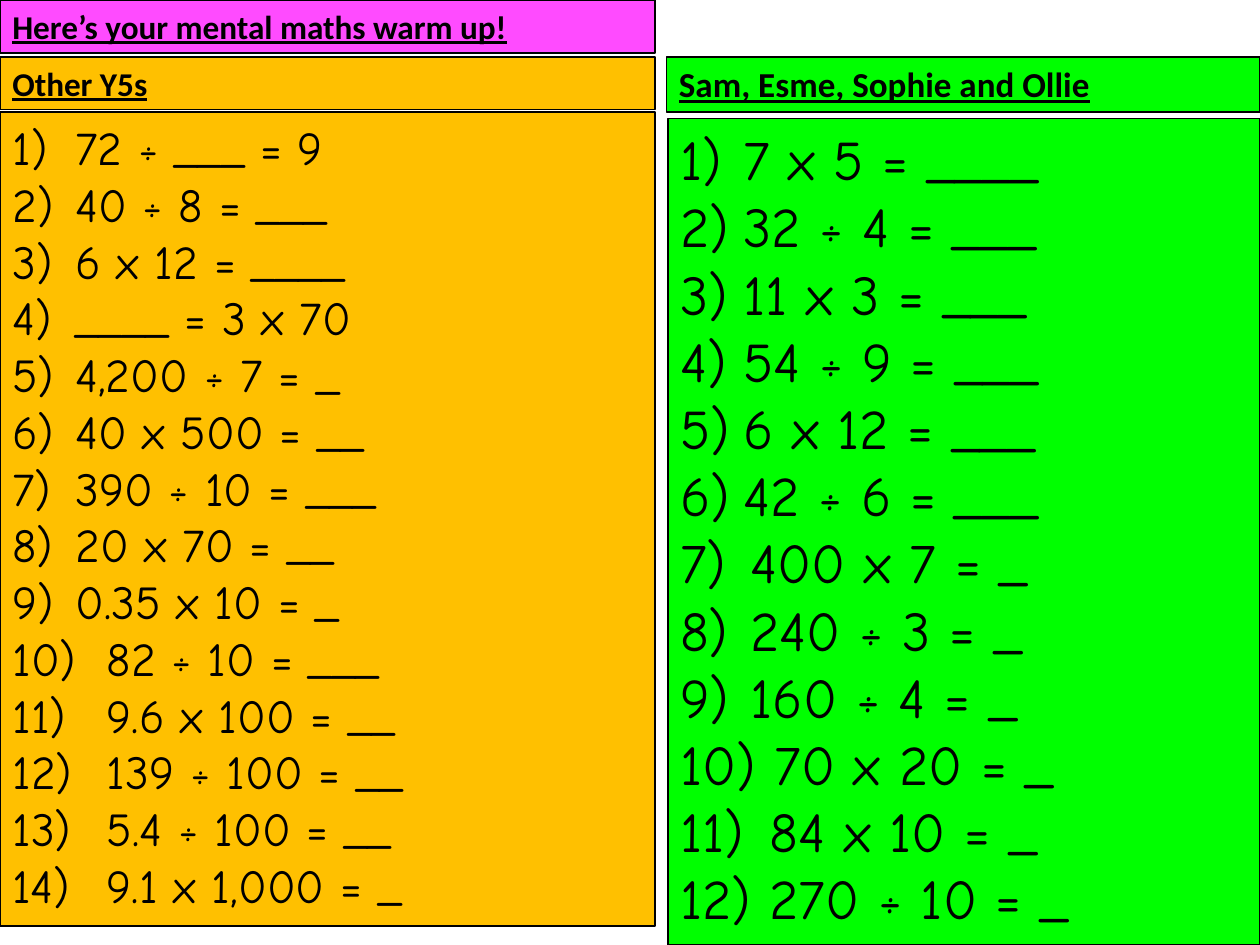
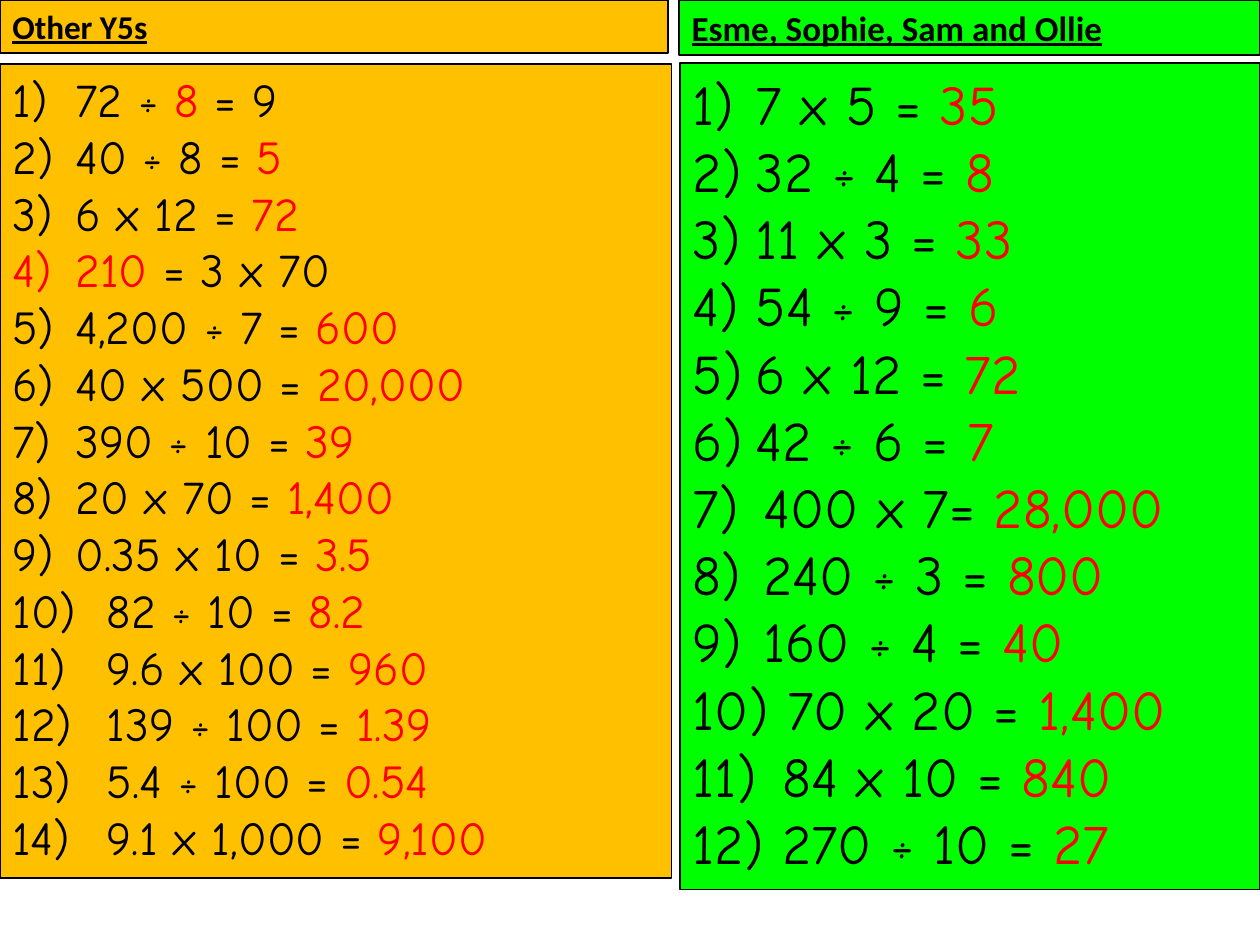
from dataclasses import dataclass

from lxml.etree import SubElement
from pptx import Presentation
from pptx.dml.color import RGBColor
from pptx.enum.shapes import MSO_SHAPE as Preset
from pptx.enum.text import MSO_ANCHOR as Anchor, MSO_AUTO_SIZE as AutoSize, PP_ALIGN as Align
from pptx.oxml.ns import qn
from pptx.util import Inches, Pt

BLACK = RGBColor(0x00, 0x00, 0x00)
RED = RGBColor(0xFF, 0x00, 0x00)
ORANGE = RGBColor(0xFF, 0xC0, 0x00)
GREEN = RGBColor(0x00, 0xFF, 0x00)
PINK = RGBColor(0xFF, 0x4B, 0xFF)

HEADING_FONT = "Calibri"
SUM_FONT = "Comic Neue"
GRID = Inches(0.1)
COLUMNS, ROWS = 100, 75


@dataclass
class Box:
    """A rectangle measured in grid columns and rows."""
    left: float
    top: float
    width: float
    height: float


@dataclass
class Group:
    """A set of sums, its look, and the text indent from each given number on."""
    color: RGBColor
    heading_size: int
    sum_size: int
    indents: dict
    sums: list


OTHERS = Group(ORANGE, 19, 27, {1: 0.5, 10: 0.75}, [
    ("72 ÷ {} = 9", "___", "8"),
    ("40 ÷ 8 = {}", "___", "5"),
    ("6 x 12 = {}", "____", "72"),
    ("{} = 3 x 70", "____", "210"),
    ("4,200 ÷ 7 = {}", "_", "600"),
    ("40 x 500 = {}", "__", "20,000"),
    ("390 ÷ 10 = {}", "___", "39"),
    ("20 x 70 = {}", "__", "1,400"),
    ("0.35 x 10 = {}", "_", "3.5"),
    ("82 ÷ 10 = {}", "___", "8.2"),
    ("9.6 x 100 = {}", "__", "960"),
    ("139 ÷ 100 = {}", "__", "1.39"),
    ("5.4 ÷ 100 = {}", "__", "0.54"),
    ("9.1 x 1,000 = {}", "_", "9,100"),
])
NAMED = Group(GREEN, 20, 32, {1: 0.5, 7: 0.56, 10: 0.75, 11: 0.71}, [
    ("7 x 5 = {}", "____", "35"),
    ("32 ÷ 4 = {}", "___", "8"),
    ("11 x 3 = {}", "___", "33"),
    ("54 ÷ 9 = {}", "___", "6"),
    ("6 x 12 = {}", "___", "72"),
    ("42 ÷ 6 = {}", "___", "7"),
    ("400 x 7 = {}", "_", "28,000"),
    ("240 ÷ 3 = {}", "_", "800"),
    ("160 ÷ 4 = {}", "_", "40"),
    ("70 x 20 = {}", "_", "1,400"),
    ("84 x 10 = {}", "_", "840"),
    ("270 ÷ 10 = {}", "_", "27"),
])
ANSWER_WORDING = {"400 x 7 = {}": "400 x 7= {}"}


def add_box(slide, box, color):
    """Draw an outlined rectangle and return its text frame."""
    edges = (round(length * GRID) for length in (box.left, box.top, box.width, box.height))
    shape = slide.shapes.add_shape(Preset.RECTANGLE, *edges)
    shape.shadow.inherit = False
    shape.fill.solid()
    shape.fill.fore_color.rgb = color
    shape.line.color.rgb = BLACK
    shape.line.width = Pt(1)
    frame = shape.text_frame
    frame.word_wrap = True
    frame.auto_size = AutoSize.SHAPE_TO_FIT_TEXT
    frame.vertical_anchor = Anchor.TOP
    return frame


def add_run(paragraph, text, font_name, size, color=BLACK):
    """Append a styled run and return its font."""
    run = paragraph.add_run()
    run.text = text
    run.font.name = font_name
    run.font.size = Pt(size)
    run.font.color.rgb = color
    return run.font


def add_heading(slide, box, text, color, size):
    """Draw a band with a bold, underlined heading."""
    paragraph = add_box(slide, box, color).paragraphs[0]
    paragraph.alignment = Align.LEFT
    font = add_run(paragraph, text, HEADING_FONT, size)
    font.bold = font.underline = True


def number_paragraph(paragraph, start, indent):
    """Give a paragraph an automatic number with a hanging indent."""
    properties = paragraph._p.get_or_add_pPr()
    properties.set("marL", str(Inches(indent)))
    properties.set("indent", str(-Inches(indent)))
    SubElement(properties, qn("a:buFont"), typeface="+mj-lt")
    SubElement(properties, qn("a:buAutoNum"), type="arabicParenR", startAt=str(start))


def add_sums(slide, box, group, answered):
    """Draw the numbered sums, with red answers or with blanks to fill."""
    frame = add_box(slide, box, group.color)
    for number, (wording, blank, answer) in enumerate(group.sums, 1):
        paragraph = frame.paragraphs[0] if number == 1 else frame.add_paragraph()
        paragraph.alignment = Align.LEFT
        start = max(first for first in group.indents if first <= number)
        number_paragraph(paragraph, start, group.indents[start])
        if not answered:
            add_run(paragraph, wording.format(blank), SUM_FONT, group.sum_size)
            continue
        before, _, after = ANSWER_WORDING.get(wording, wording).partition("{}")
        for text, color in ((before, BLACK), (answer, RED), (after, BLACK)):
            if text:
                add_run(paragraph, text, SUM_FONT, group.sum_size, color)


def add_panel(slide, group, heading, heading_box, sums_box, answered):
    """Place a group's heading band above its sums."""
    add_heading(slide, heading_box, heading, group.color, group.heading_size)
    add_sums(slide, sums_box, group, answered)


def add_question_slide(presentation):
    """Build the warm-up slide with blanks."""
    slide = presentation.slides.add_slide(presentation.slide_layouts[6])
    add_panel(slide, OTHERS, "Other Y5s",
              Box(0, 4.5, 52, 4.2), Box(0, 8.9, 52, 64.6), False)
    add_panel(slide, NAMED, "Sam, Esme, Sophie and Ollie",
              Box(52.9, 4.5, 47.1, 4.4), Box(53, 9.4, 47, 65.6), False)
    add_heading(slide, Box(0, 0, 52, 4.2), "Here’s your mental maths warm up!", PINK, 19)


def add_answer_slide(presentation):
    """Build the slide with the answers."""
    slide = presentation.slides.add_slide(presentation.slide_layouts[6])
    add_panel(slide, OTHERS, "Other Y5s",
              Box(0, 0, 53, 4.2), Box(0, 5.1, 53.3, 64.6), True)
    add_panel(slide, NAMED, "Esme, Sophie, Sam and Ollie",
              Box(53.9, 0, 46.1, 4.4), Box(54, 5, 46, 65.6), True)


def main():
    """Create and save the presentation."""
    presentation = Presentation()
    presentation.slide_width = COLUMNS * GRID
    presentation.slide_height = ROWS * GRID
    add_question_slide(presentation)
    add_answer_slide(presentation)
    presentation.save("out.pptx")


if __name__ == "__main__":
    main()
